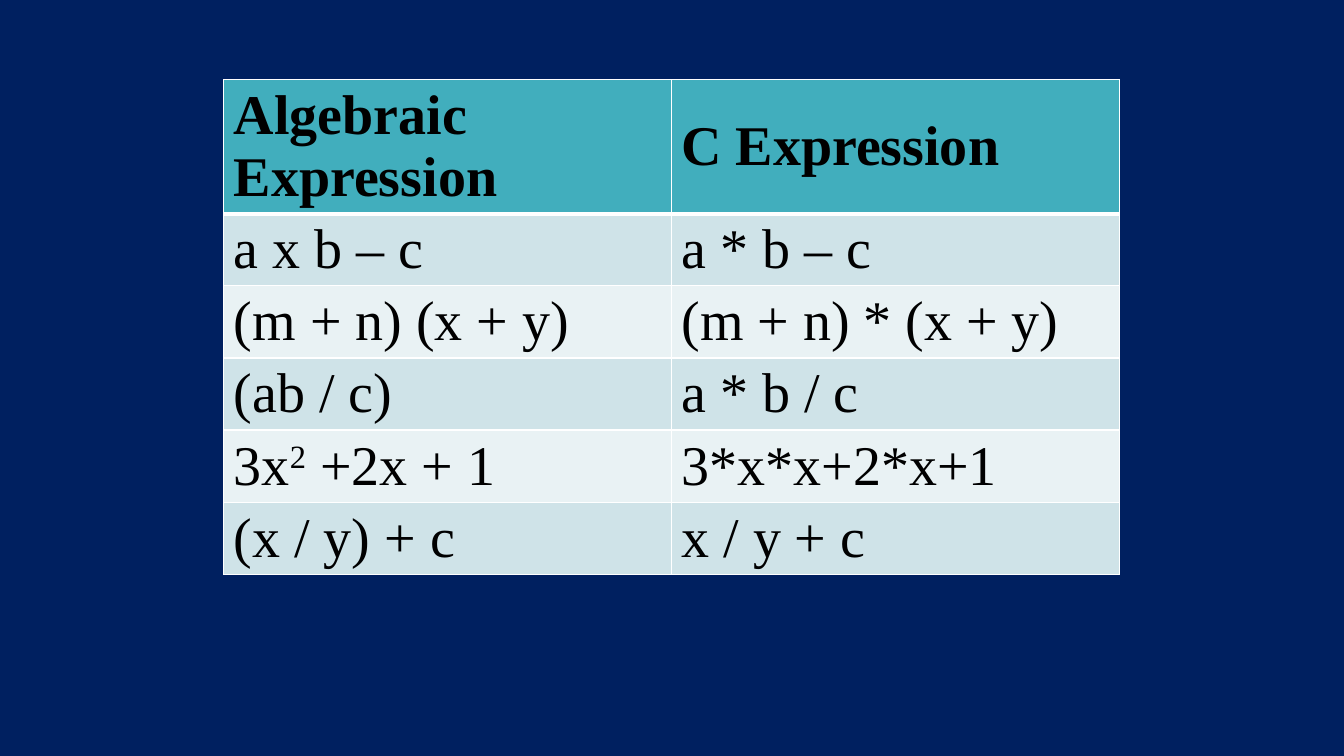
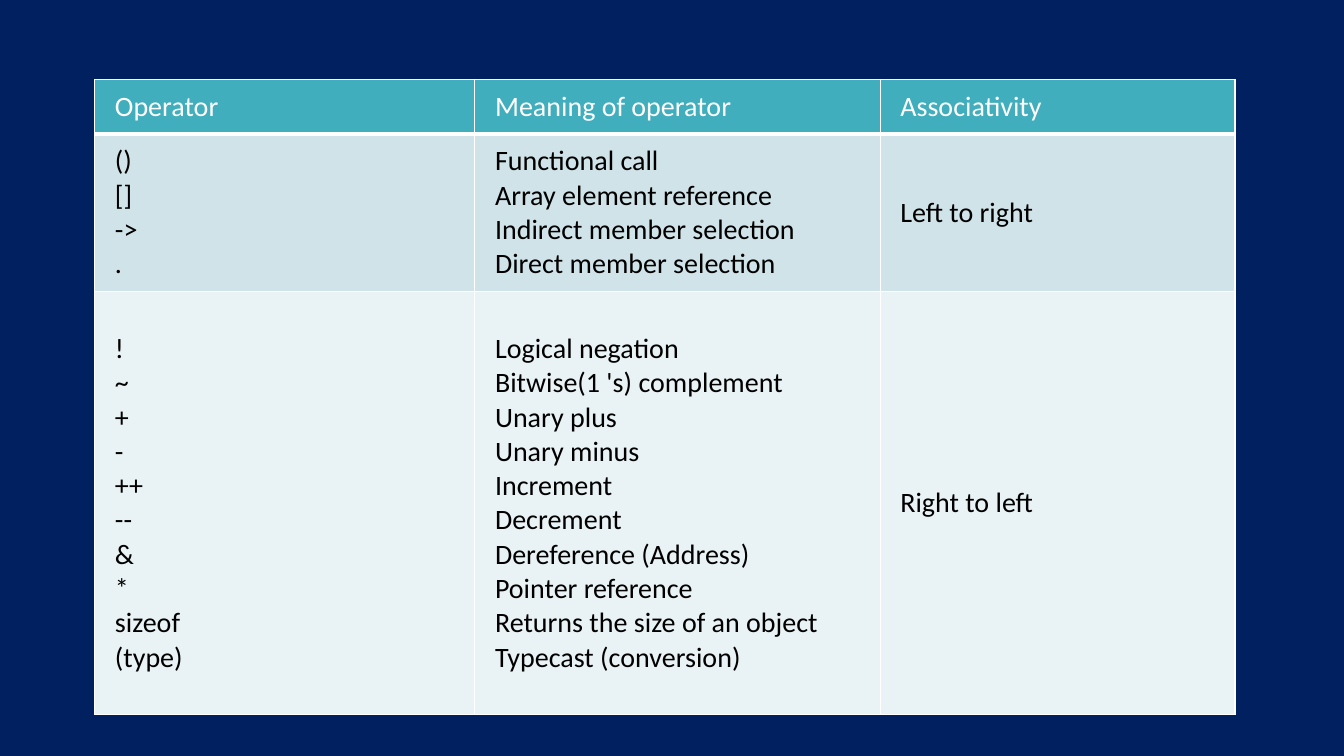
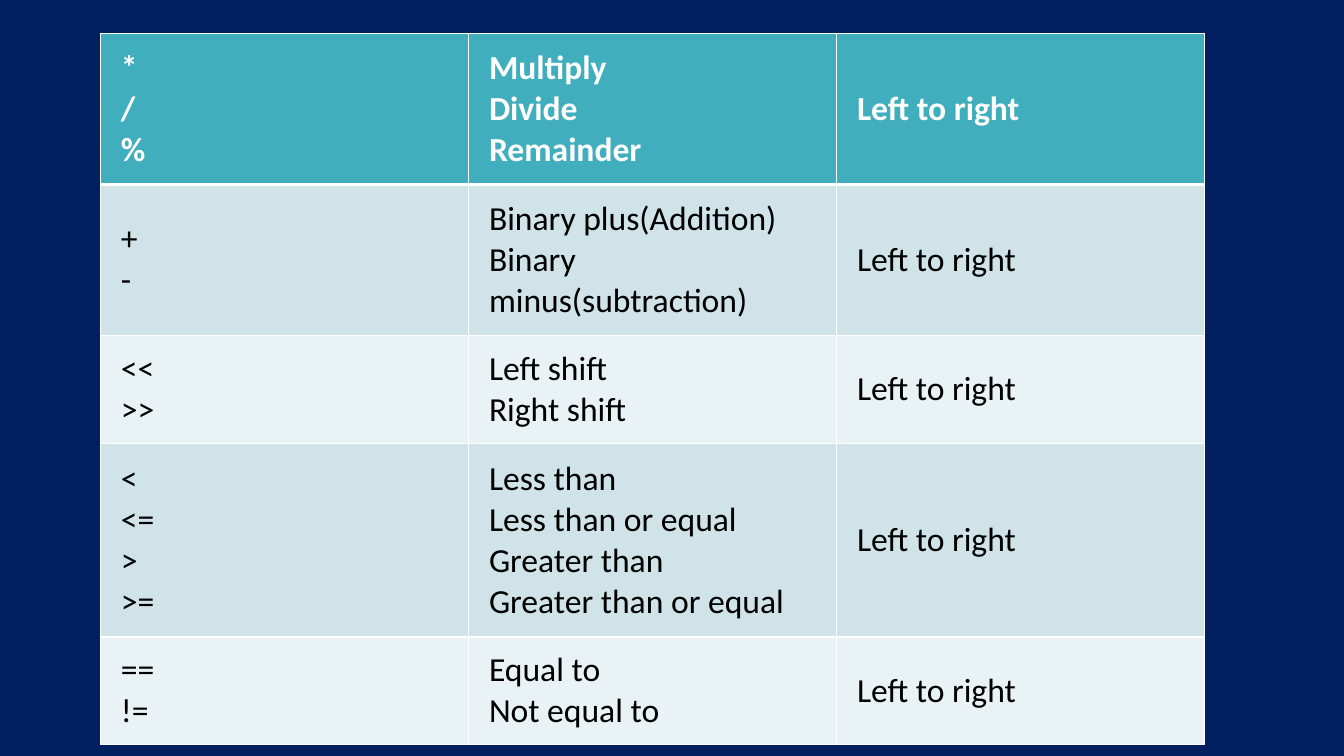
from dataclasses import dataclass

from lxml import etree
from pptx import Presentation
from pptx import util as u
from pptx.dml.color import RGBColor
from pptx.enum import text
from pptx.oxml import ns


@dataclass(frozen=True)
class Theme:
    background: str = "002060"
    header: str = "41AEBD"
    bands: tuple = ("CFE3E8", "E9F2F4")
    rule: str = "FFFFFF"
    dark: str = "000000"
    light: str = "FFFFFF"
    serif: str = "Times New Roman"
    sans: str = "Calibri"
    large: int = 40
    medium: int = 24
    small: int = 20
    thin: int = 1
    thick: int = 3


@dataclass(frozen=True)
class TableStyle:
    font: str
    size: int
    header_color: str
    header_bold: bool
    margins: tuple = (0.2, 0.1)
    align: text.PP_ALIGN = text.PP_ALIGN.LEFT


class TableDeck:
    """Build slides of banded tables in one shared theme."""

    def __init__(self, theme):
        self.theme = theme
        self.deck = Presentation()
        self.deck.slide_width = u.Inches(13.33)
        self.deck.slide_height = u.Inches(7.5)
        self.page = None
        fill = self.deck.slide_master.background.fill
        fill.solid()
        fill.fore_color.rgb = RGBColor.from_string(theme.background)

    def add_page(self):
        self.page = self.deck.slides.add_slide(self.deck.slide_layouts[6])

    def add_table(self, left, top, widths, heights, rows, style):
        frame = self.page.shapes.add_table(
            len(heights), len(widths), u.Inches(left), u.Inches(top),
            u.Inches(sum(widths)), u.Inches(sum(heights)))
        table = frame.table
        for column, width in zip(table.columns, widths):
            column.width = u.Inches(width)
        for row, height in zip(table.rows, heights):
            row.height = u.Inches(height)
        for row_index, row in enumerate(rows):
            for column_index, wording in enumerate(row):
                cell = table.cell(row_index, column_index)
                self.format_cell(cell, row_index, style)
                self.write_cell(cell, wording, row_index == 0, style)

    def format_cell(self, cell, row_index, style):
        theme = self.theme
        side, end = style.margins
        cell.margin_left = cell.margin_right = u.Inches(side)
        cell.margin_top = cell.margin_bottom = u.Inches(end)
        cell.vertical_anchor = text.MSO_ANCHOR.MIDDLE
        cell.fill.solid()
        color = theme.bands[(row_index - 1) % 2] if row_index else theme.header
        cell.fill.fore_color.rgb = RGBColor.from_string(color)
        top = theme.thick if row_index == 1 else theme.thin
        bottom = theme.thin if row_index else theme.thick
        self.add_borders(cell, L=theme.thin, R=theme.thin, T=top, B=bottom)

    def add_borders(self, cell, **widths):
        properties = cell._tc.get_or_add_tcPr()
        for position, (side, width) in enumerate(widths.items()):
            line = etree.Element(ns.qn(f"a:ln{side}"), w=str(u.Pt(width)))
            fill = etree.SubElement(line, ns.qn("a:solidFill"))
            etree.SubElement(fill, ns.qn("a:srgbClr"), val=self.theme.rule)
            properties.insert(position, line)

    def write_cell(self, cell, wording, is_header, style):
        para = cell.text_frame.paragraphs[0]
        base, *pieces = wording.split("^")
        para.text = base
        for index, piece in enumerate(pieces):
            span = para.add_run()
            span.text = piece
            if index % 2 == 0:
                span._r.get_or_add_rPr().set("baseline", "30000")
        para.alignment = style.align
        para.font.name = style.font
        para.font.size = u.Pt(style.size)
        para.font.bold = is_header and style.header_bold
        color = style.header_color if is_header else self.theme.dark
        para.font.color.rgb = RGBColor.from_string(color)


EXPRESSIONS = [
    ("Algebraic Expression", "C Expression"),
    ("a x b – c", "a * b – c"),
    ("(m + n) (x + y)", "(m + n) * (x + y)"),
    ("(ab / c)", "a * b / c"),
    ("3x^2^ +2x + 1", "3*x*x+2*x+1"),
    ("(x / y) + c", "x / y + c"),
]

UNARY_OPERATORS = [
    ("Operator", "Meaning of operator", "Associativity"),
    ("()\n[]\n->\n.",
     "Functional call\nArray element reference\n"
     "Indirect member selection\nDirect member selection",
     "Left to right"),
    ("!\n~\n+\n-\n++\n--\n&\n*\nsizeof\n(type)",
     "Logical negation\nBitwise(1 's) complement\nUnary plus\nUnary minus\n"
     "Increment\nDecrement\nDereference (Address)\nPointer reference\n"
     "Returns the size of an object\nTypecast (conversion)",
     "Right to left"),
]

BINARY_OPERATORS = [
    (signs, meaning, "Left to right") for signs, meaning in (
        ("*\n/\n%", "Multiply\nDivide\nRemainder"),
        ("+\n-", "Binary plus(Addition)\nBinary minus(subtraction)"),
        ("<<\n>>", "Left shift\nRight shift"),
        ("<\n<=\n>\n>=",
         "Less than\nLess than or equal\nGreater than\nGreater than or equal"),
        ("==\n!=", "Equal to\nNot equal to"),
    )
]


def main():
    theme = Theme()
    expression_style = TableStyle(
        theme.serif, theme.large, theme.dark, True,
        margins=(0.1, 0.05), align=text.PP_ALIGN.JUSTIFY)
    unary_style = TableStyle(theme.sans, theme.small, theme.light, False)
    binary_style = TableStyle(theme.sans, theme.medium, theme.light, True)

    builder = TableDeck(theme)
    builder.add_page()
    builder.add_table(2.22, 0.79, [4.44] * 2, [1.33] + [0.71] * 5,
                      EXPRESSIONS, expression_style)
    builder.add_page()
    builder.add_table(0.94, 0.79, [3.77, 4.02, 3.52], [0.53, 1.56, 4.2],
                      UNARY_OPERATORS, unary_style)
    builder.add_page()
    builder.add_table(1, 0.33, [3.65] * 3, [1.5, 1.5, 1.07, 1.92, 1.07],
                      BINARY_OPERATORS, binary_style)
    builder.deck.save("out.pptx")


if __name__ == "__main__":
    main()
